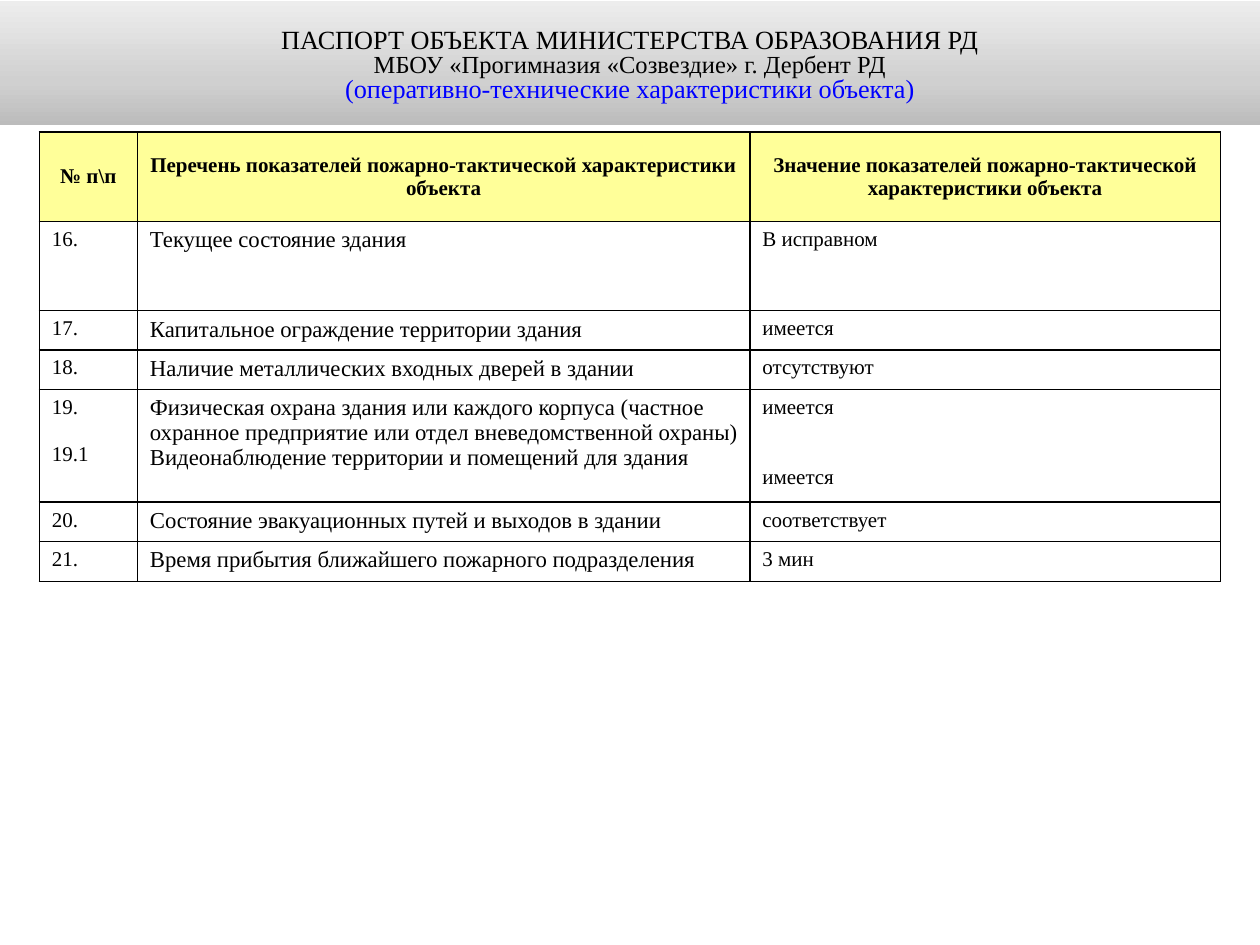
"""Build the fire-safety passport slide with its table of building characteristics."""
from copy import deepcopy

from lxml.etree import SubElement
from pptx import Presentation
from pptx.dml.color import RGBColor
from pptx.enum.text import MSO_ANCHOR as Anchor, MSO_AUTO_SIZE as AutoSize, PP_ALIGN as Align
from pptx.oxml.ns import qn
from pptx.util import Pt


def color(value):
    """Return the colour for a hex string."""
    return RGBColor.from_string(value)


def format_text(para, size, shade="000000", bold=False):
    """Format every run of a paragraph."""
    for span in para.runs:
        for name, value in {"name": "Times New Roman", "size": Pt(size), "bold": bold}.items():
            setattr(span.font, name, value)
        span.font.color.rgb = color(shade)


deck = Presentation()
deck.slide_width, deck.slide_height = Pt(720), Pt(540)
page = deck.slides.add_slide(deck.slide_layouts[5])

title = page.shapes.title
for name, value in {"left": 0, "top": 0.5, "width": 720, "height": 71}.items():
    setattr(title, name, Pt(value))
title.fill.gradient()
title.fill.gradient_angle = 90
stop_list = title.element.find(".//" + qn("a:gsLst"))
stop_list.append(deepcopy(stop_list[0]))
gradient = [(0, "BCBCBC"), (0.35, "D0D0D0"), (1, "EDEDED")]
for stop, (position, shade) in zip(title.fill.gradient_stops, gradient):
    stop.position = position
    stop.color.rgb = color(shade)

heading = [
    ("ПАСПОРТ ОБЪЕКТА МИНИСТЕРСТВА ОБРАЗОВАНИЯ РД", 15, "000000", 1),
    ("МБОУ «Прогимназия «Созвездие» г. Дербент РД", 14, "000000", 0.8),
    ("(оперативно-технические характеристики объекта)", 15, "0000FF", 0.8),
]
frame = title.text_frame
frame.text = "\n".join(line[0] for line in heading)
for name, value in {"word_wrap": True, "auto_size": AutoSize.NONE,
                    "vertical_anchor": Anchor.MIDDLE}.items():
    setattr(frame, name, value)
for para, (text, size, shade, spacing) in zip(frame.paragraphs, heading):
    para.alignment = Align.CENTER
    para.line_spacing = spacing
    format_text(para, size, shade)

rows = [
    ("№ п\\п", "Перечень показателей пожарно-тактической характеристики объекта",
     "Значение показателей пожарно-тактической характеристики объекта"),
    ("16.", "Текущее состояние здания", "В исправном"),
    ("17.", "Капитальное ограждение территории здания", "имеется"),
    ("18.", "Наличие металлических входных дверей в здании", "отсутствуют"),
    ("19.\n19.1",
     "Физическая охрана здания или каждого корпуса (частное охранное предприятие "
     "или отдел вневедомственной охраны)\n"
     "Видеонаблюдение территории и помещений для здания", "имеется\nимеется"),
    ("20.", "Состояние эвакуационных путей и выходов в здании", "соответствует"),
    ("21.", "Время прибытия ближайшего пожарного подразделения", "3 мин"),
]
widths = [56, 350, 269]
heights = [51, 51, 22.5, 22.5, 64.5, 22.5, 23]
second_line_gaps = [13.4, 0, 26.6]
table = page.shapes.add_table(len(rows), len(widths), Pt(22.5), Pt(75.5),
                              Pt(sum(widths)), Pt(sum(heights))).table
for column, width in zip(table.columns, widths):
    column.width = Pt(width)
for row, height in zip(table.rows, heights):
    row.height = Pt(height)

for row_index, texts in enumerate(rows):
    header = row_index == 0
    for column_index, text in enumerate(texts):
        cell = table.cell(row_index, column_index)
        cell.text = text
        properties = cell._tc.get_or_add_tcPr()
        for side in ("a:lnL", "a:lnR", "a:lnT", "a:lnB"):
            border = SubElement(properties, qn(side), w=str(Pt(1)))
            SubElement(SubElement(border, qn("a:solidFill")), qn("a:srgbClr"), val="000000")
        cell.fill.solid()
        cell.fill.fore_color.rgb = color("FFFF99" if header else "FFFFFF")
        cell.vertical_anchor = Anchor.MIDDLE if header else Anchor.TOP
        size = 13 if column_index == 1 and not header else 12
        for line_index, para in enumerate(cell.text_frame.paragraphs):
            para.alignment = Align.CENTER if header else Align.LEFT
            para.space_before = Pt(second_line_gaps[column_index] * line_index)
            format_text(para, size, bold=header)

deck.save("out.pptx")
